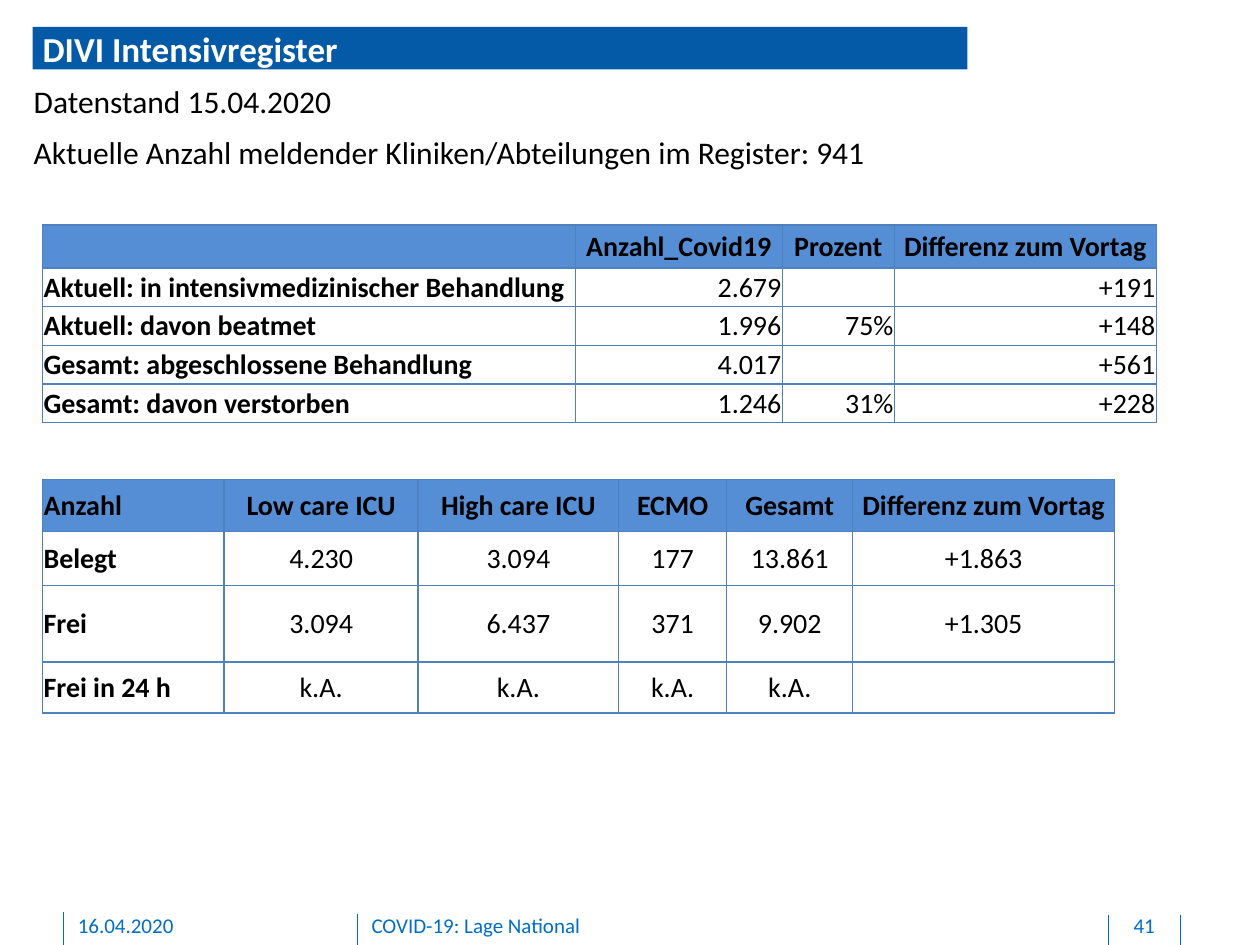
from lxml import etree
from pptx import Presentation
from pptx import util as u
from pptx.dml import color
from pptx.enum import shapes, text
from pptx.oxml import ns

BLUE, BAR, HEADER, GRID = "006EC7", "045AA6", "558ED5", "4F81BD"
BLACK, WHITE = "000000", "FFFFFF"
LEFT, CENTER, RIGHT = text.PP_ALIGN.LEFT, text.PP_ALIGN.CENTER, text.PP_ALIGN.RIGHT
MIDDLE = text.MSO_ANCHOR.MIDDLE

CASES = [
    ["", "Anzahl_Covid19", "Prozent", "Differenz zum Vortag"],
    ["Aktuell: in intensivmedizinischer Behandlung", "2.679", "", "+191"],
    ["Aktuell: davon beatmet", "1.996", "75%", "+148"],
    ["Gesamt: abgeschlossene Behandlung", "4.017", "", "+561"],
    ["Gesamt: davon verstorben", "1.246", "31%", "+228"],
]
BEDS = [
    ["Anzahl", "Low care ICU", "High care ICU", "ECMO", "Gesamt", "Differenz zum Vortag"],
    ["Belegt", "4.230", "3.094", "177", "13.861", "+1.863"],
    ["Frei", "3.094", "6.437", "371", "9.902", "+1.305"],
    ["Frei in 24 h", "k.A.", "k.A.", "k.A.", "k.A.", ""],
]


def rgb(value):
    return color.RGBColor.from_string(value)


def assign(target, values):
    for name, value in values.items():
        setattr(target, name, value)


def margins(left, top, right, bottom):
    sides = ("left", "top", "right", "bottom")
    return {f"margin_{side}": u.Cm(size)
            for side, size in zip(sides, (left, top, right, bottom))}


def write(para, words, size, ink, bold=False, align=LEFT):
    para.alignment = align
    if not words:
        etree.SubElement(para._p, ns.qn("a:endParaRPr"), sz=str(size * 100))
        return
    span = para.add_run()
    span.text = words
    assign(span.font, {"name": "Calibri", "size": u.Pt(size), "bold": bold})
    span.font.color.rgb = rgb(ink)


def place(shape, left, top, width, height):
    assign(shape, {"left": u.Cm(left), "top": u.Cm(top),
                   "width": u.Cm(width), "height": u.Cm(height)})


def add_title(page, words):
    title = page.shapes.title
    place(title, 0.66, 0.54, 18.84, 0.86)
    title.fill.solid()
    title.fill.fore_color.rgb = rgb(BAR)
    assign(title.text_frame, {"vertical_anchor": MIDDLE, "word_wrap": True,
                              "auto_size": text.MSO_AUTO_SIZE.NONE,
                              **margins(0.2, 0, 0, 0)})
    write(title.text_frame.paragraphs[0], words, 20, WHITE, True)


def add_text(page, words, area, size, ink, insets, align=LEFT):
    box = page.shapes.add_textbox(*map(u.Cm, area))
    assign(box.text_frame, {"word_wrap": True, **margins(*insets)})
    write(box.text_frame.paragraphs[0], words, size, ink, align=align)


def add_divider(page, x, top):
    line = page.shapes.add_connector(
        shapes.MSO_CONNECTOR.STRAIGHT, u.Cm(x), u.Cm(top), u.Cm(x), u.Cm(19.05))
    line.line.color.rgb = rgb(BLUE)
    line.line.width = u.Pt(0.5)
    etree.SubElement(line._element.spPr, ns.qn("a:effectLst"))


def add_borders(cell):
    properties = cell._tc.get_or_add_tcPr()
    for side in ("lnL", "lnR", "lnT", "lnB"):
        edge = etree.SubElement(properties, ns.qn(f"a:{side}"), w=str(u.Pt(1)))
        fill = etree.SubElement(edge, ns.qn("a:solidFill"))
        etree.SubElement(fill, ns.qn("a:srgbClr"), val=GRID)


def format_cell(cell, words, is_header, bold, align):
    assign(cell, {"vertical_anchor": MIDDLE, **margins(0.02, 0.02, 0.02, 0)})
    add_borders(cell)
    if is_header:
        cell.fill.solid()
        cell.fill.fore_color.rgb = rgb(HEADER)
    else:
        cell.fill.background()
    write(cell.text_frame.paragraphs[0], words, 16, BLACK, bold, align)


def add_table(page, rows, top, widths, heights, number_align):
    frame = page.shapes.add_table(
        len(rows), len(widths), u.Cm(0.86), u.Cm(top),
        u.Cm(sum(widths)), u.Cm(sum(heights)))
    table = frame.table
    assign(table, {"first_row": False, "horz_banding": False})
    for column, width in zip(table.columns, widths):
        column.width = u.Cm(width)
    for r, (row, height) in enumerate(zip(rows, heights)):
        table.rows[r].height = u.Cm(height)
        for c, words in enumerate(row):
            align = LEFT if c == 0 else CENTER if r == 0 else number_align
            format_cell(table.cell(r, c), words, r == 0, r == 0 or c == 0, align)


def add_footer(page):
    for x, top in ((7.21, 18.42), (1.27, 18.39), (23.8, 18.44), (22.35, 18.44)):
        add_divider(page, x, top)
    for words, left, width, align in (
            ("16.04.2020", 1.57, 5.16, LEFT),
            ("COVID-19: Lage National", 7.49, 14.4, LEFT),
            ("41", 22.38, 1.37, CENTER)):
        add_text(page, words, (left, 18.39, width, 0.53), 12, BLUE,
                 (0, 0, 0, 0.13), align)


def main():
    deck = Presentation()
    assign(deck, {"slide_width": u.Cm(25.4), "slide_height": u.Cm(19.05)})
    page = deck.slides.add_slide(deck.slide_layouts[5])
    add_footer(page)
    add_title(page, "DIVI Intensivregister")
    for words, top, width in (
            ("Datenstand 15.04.2020", 1.52, 11.25),
            ("Aktuelle Anzahl meldender Kliniken/Abteilungen im Register: 941", 2.55, 18.85)):
        add_text(page, words, (0.43, top, width, 1.02), 18, BLACK,
                 (0.25, 0.13, 0.25, 0.13))
    add_table(page, CASES, 4.54, [10.74, 4.17, 2.26, 5.28], [0.86] + [0.78] * 4, RIGHT)
    add_table(page, BEDS, 9.67, [3.66, 3.91, 4.04, 2.18, 2.54, 5.28],
              [1.04, 1.09, 1.55, 1.02], CENTER)
    deck.save("out.pptx")


if __name__ == "__main__":
    main()
